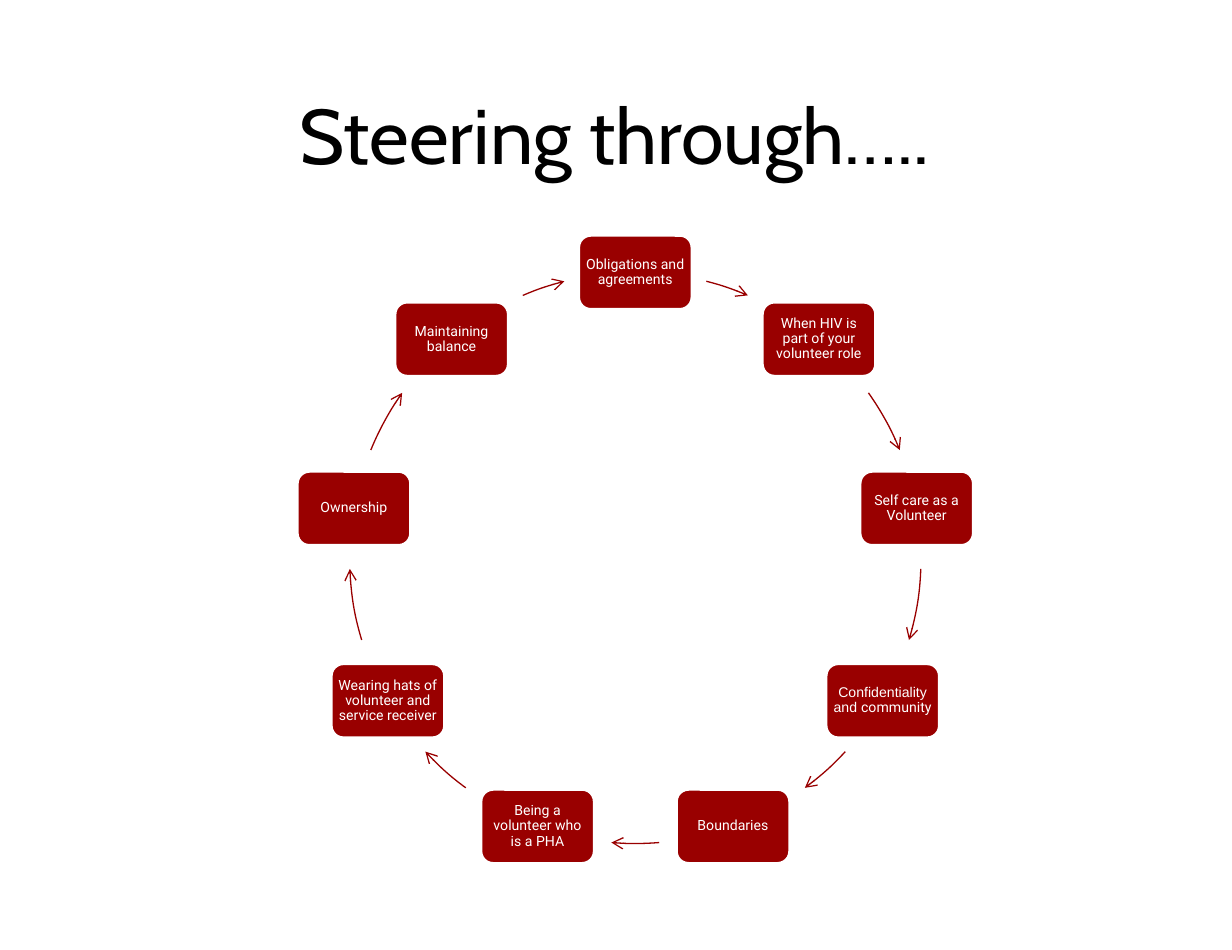
from math import cos, radians, sin

from pptx import Presentation
from pptx.dml.color import RGBColor
from pptx.enum.shapes import MSO_SHAPE as SHAPE
from pptx.enum.text import MSO_ANCHOR as ANCHOR, MSO_AUTO_SIZE as AUTO_SIZE, PP_ALIGN as ALIGN
from pptx.oxml.ns import qn
from pptx.util import Emu, Inches, Pt

RED = RGBColor(0x99, 0x00, 0x00)
WHITE = RGBColor(0xFF, 0xFF, 0xFF)
BLACK = RGBColor(0x00, 0x00, 0x00)

# Each topic is a list of (text, font) runs, clockwise from the top
TOPICS = [
    [("Obligations and agreements", "Roboto")],
    [("When HIV is part of your volunteer role", "Roboto")],
    [("Self care as a Volunteer", "Roboto")],
    [("Confidentiality and ", "Arial"), ("community", "Roboto")],
    [("Boundaries", "Roboto")],
    [("Being a volunteer who is a PHA", "Roboto")],
    [("Wearing hats of volunteer and service receiver", "Roboto")],
    [("Ownership", "Roboto")],
    [("Maintaining balance", "Roboto")],
]

# Arrow start and end in degrees clockwise from the top; the left half mirrors the right
RIGHT_ARCS = [(14.4, 23.2), (54.7, 67.8), (92.2, 106.7), (132.7, 143.6)]
LEFT_ARCS = [(360 - end, 360 - start) for start, end in reversed(RIGHT_ARCS)]
ARCS = RIGHT_ARCS + [(175.2, 184.8)] + LEFT_ARCS

BOX_W, BOX_H = 0.9, 0.59


def add_title(slide, left, top, width, height):
    title = slide.shapes.title
    title.left, title.top = Inches(left), Inches(top)
    title.width, title.height = Inches(width), Inches(height)
    tf = title.text_frame
    tf.text = "Steering through….."
    tf.auto_size = AUTO_SIZE.NONE
    tf.vertical_anchor = ANCHOR.BOTTOM
    tf.margin_left = tf.margin_right = tf.margin_top = tf.margin_bottom = Inches(0.05)
    p = tf.paragraphs[0]
    p.alignment = ALIGN.CENTER
    p.font.name, p.font.size = "Cabin", Pt(44)
    p.font.color.rgb = BLACK


def add_topic(slide, center_x, center_y, runs):
    sp = slide.shapes.add_shape(
        SHAPE.ROUNDED_RECTANGLE,
        Inches(center_x - BOX_W / 2), Inches(center_y - BOX_H / 2),
        Inches(BOX_W), Inches(BOX_H))
    sp.shadow.inherit = False
    sp.fill.solid()
    sp.fill.fore_color.rgb = RED
    sp.line.color.rgb = WHITE
    sp.line.width = Pt(2)
    tf = sp.text_frame
    tf.word_wrap = True
    tf.vertical_anchor = ANCHOR.MIDDLE
    tf.margin_left = tf.margin_right = tf.margin_top = tf.margin_bottom = Inches(0.03)
    p = tf.paragraphs[0]
    p.alignment = ALIGN.CENTER
    p.line_spacing = 0.9
    p.font.size = Pt(8)
    p.font.color.rgb = WHITE
    for text, font in runs:
        r = p.add_run()
        r.text = text
        r.font.name = font


def add_arc_arrow(slide, left, top, size, start, end):
    arc = slide.shapes.add_shape(
        SHAPE.ARC, Inches(left), Inches(top), Inches(size), Inches(size))
    arc.shadow.inherit = False
    arc.fill.background()
    arc.line.color.rgb = RED
    arc.line.width = Pt(0.75)
    # Arc angles run clockwise from the right, in 60000ths of a degree
    for i, angle in enumerate((start, end)):
        arc.adjustments[i] = (angle - 90) % 360 * 60000 / 100000
    ln = arc.line._get_or_add_ln()
    ln.append(ln.makeelement(qn("a:tailEnd"), {"type": "arrow"}))


def add_cycle(slide, left, top, size):
    radius = size / 2
    for i, (runs, (start, end)) in enumerate(zip(TOPICS, ARCS)):
        angle = radians(360 / len(TOPICS) * i)
        add_topic(slide, left + radius * (1 + sin(angle)),
                  top + radius * (1 - cos(angle)), runs)
        add_arc_arrow(slide, left, top, size, start, end)


def main():
    prs = Presentation()
    prs.slide_width, prs.slide_height = Emu(8891588), Inches(7.5)
    slide = prs.slides.add_slide(prs.slide_layouts[5])
    add_title(slide, 0.92, 0.6, 7.86, 0.87)
    add_cycle(slide, 2.76, 2.15, 4.51)
    prs.save("out.pptx")


if __name__ == "__main__":
    main()
